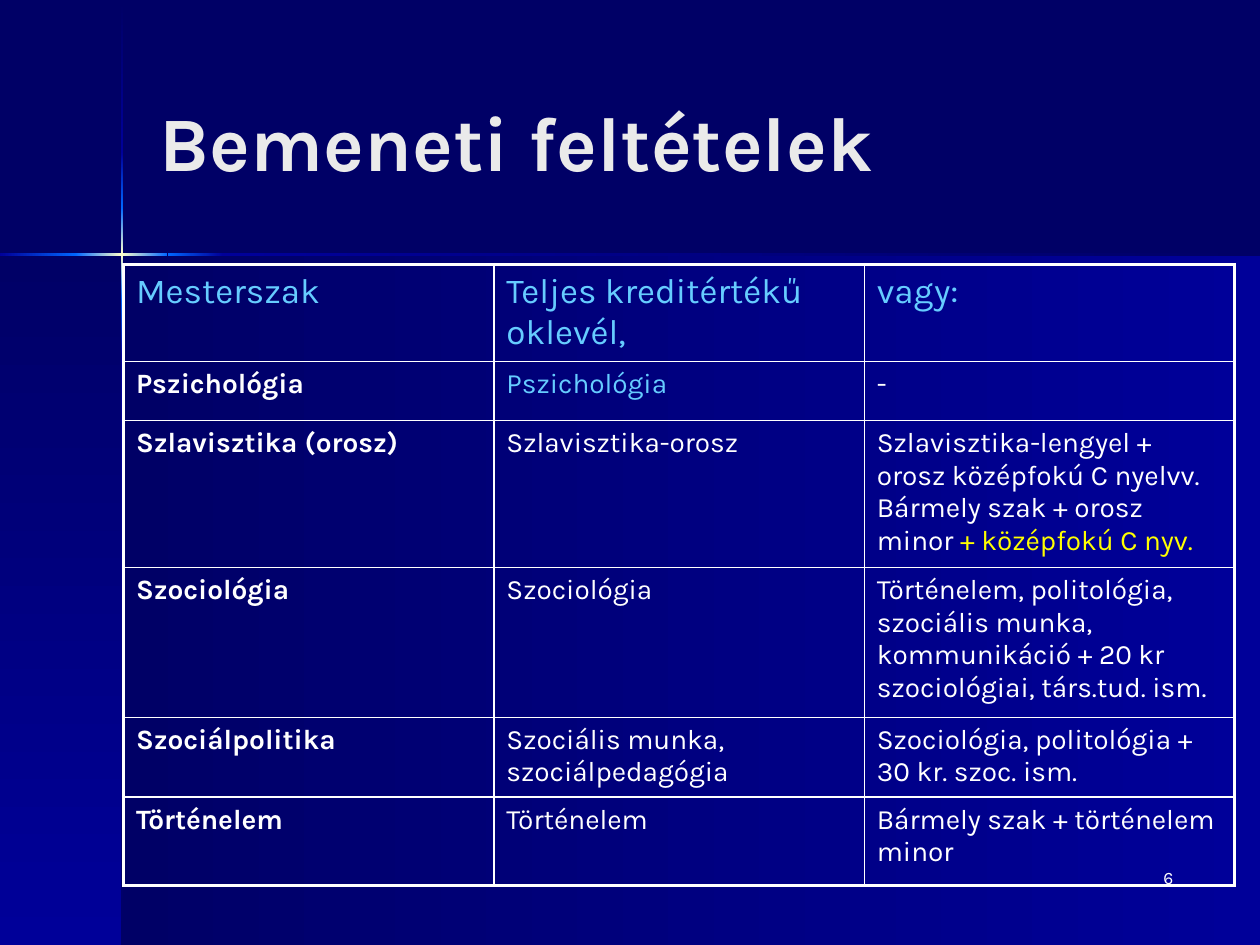
from lxml.etree import SubElement
from pptx import Presentation
from pptx.dml.color import RGBColor
from pptx.enum.shapes import MSO_SHAPE as Shape
from pptx.enum.text import MSO_ANCHOR as Anchor, PP_ALIGN as Align
from pptx.oxml.ns import qn
from pptx.util import Inches, Pt

FONT = "Karla"
NAVY, BLUE, BRIGHT, GLOW = "000066", "000099", "0066FF", "FFFFCC"
WHITE, SKY, YELLOW, PALE = "FFFFFF", "66CCFF", "FFFF00", "EAEAEA"
ACROSS, DOWN = 0, 90

HEADINGS = ["Mesterszak", "Teljes kreditértékű oklevél,", "vagy:"]
PROGRAMMES = [
    ("Pszichológia", "Pszichológia", "-"),
    ("Szlavisztika (orosz)", "Szlavisztika-orosz",
     "Szlavisztika-lengyel + orosz középfokú C nyelvv.\vBármely szak + orosz minor "),
    ("Szociológia", "Szociológia",
     "Történelem, politológia, szociális munka, kommunikáció + 20 kr szociológiai, társ.tud. ism."),
    ("Szociálpolitika", "Szociális munka, szociálpedagógia",
     "Szociológia, politológia + 30 kr. szoc. ism."),
    ("Történelem", "Történelem", "Bármely szak + történelem minor"),
]
ROW_HEIGHTS = [0.75, 0.47, 1.14, 1.19, 0.63, 0.7]


def color(value):
    return RGBColor.from_string(value)


def format_span(span, size, shade, bold=False):
    span.font.name = FONT
    span.font.size = Pt(size)
    span.font.bold = bold
    span.font.color.rgb = color(shade)


def add_gradient_box(page, left, top, width, height, shades, angle):
    box = page.shapes.add_shape(
        Shape.RECTANGLE, Inches(left), Inches(top), Inches(width), Inches(height))
    box.shadow.inherit = False
    box.line.fill.background()
    box.fill.gradient()
    box.fill.gradient_angle = -angle % 360
    stops = box._element.spPr.find(qn("a:gradFill")).find(qn("a:gsLst"))
    for stop in list(stops):
        stops.remove(stop)
    for index, shade in enumerate(shades):
        position = index * 100000 // (len(shades) - 1)
        stop = SubElement(stops, qn("a:gs"), pos=str(position))
        SubElement(stop, qn("a:srgbClr"), val=shade)


def add_backdrop(page):
    page.background.fill.solid()
    page.background.fill.fore_color.rgb = color(NAVY)
    add_gradient_box(page, 0.97, 2.02, 9.03, 5.48, [NAVY, BLUE], ACROSS)
    add_gradient_box(page, 0, 2.02, 0.97, 5.48, [NAVY, BLUE], DOWN)
    rise, flare, fall = [BLUE, BRIGHT], [BRIGHT, GLOW, BRIGHT], [BRIGHT, BLUE]
    vertical = [(0.01, 1.21, [NAVY, BLUE]), (2.82, 7.5, [BLUE, NAVY]),
                (2.38, 2.82, fall), (1.21, 1.65, rise), (1.65, 2.38, flare)]
    for start, end, shades in vertical:
        add_gradient_box(page, 0.96, start, 0.02, end - start, shades, DOWN)
    horizontal = [(1.77, 10, [BLUE, NAVY]), (0, 0.61, rise),
                  (1.33, 1.77, fall), (0.6, 1.33, flare)]
    for start, end, shades in horizontal:
        add_gradient_box(page, start, 2.01, end - start, 0.02, shades, ACROSS)


def add_label(page, left, top, width, height, text, size, shade,
              bold=False, align=Align.LEFT, anchor=Anchor.TOP):
    box = page.shapes.add_textbox(
        Inches(left), Inches(top), Inches(width), Inches(height))
    frame = box.text_frame
    frame.word_wrap = True
    frame.vertical_anchor = anchor
    frame.text = text
    para = frame.paragraphs[0]
    para.alignment = align
    format_span(para.runs[0], size, shade, bold)


def set_borders(cell, widths):
    properties = cell._tc.get_or_add_tcPr()
    for side, width in widths.items():
        line = SubElement(properties, qn(f"a:ln{side}"), w=str(Pt(width)))
        fill = SubElement(line, qn("a:solidFill"))
        SubElement(fill, qn("a:srgbClr"), val=WHITE)


def add_requirements(page, left, top, width):
    rows = [HEADINGS, *PROGRAMMES]
    last_row, last_column = len(rows) - 1, len(HEADINGS) - 1
    table = page.shapes.add_table(
        len(rows), len(HEADINGS), Inches(left), Inches(top),
        Inches(width), Inches(sum(ROW_HEIGHTS))).table
    table.first_row = False
    table.horz_banding = False
    for column in table.columns:
        column.width = Inches(width / len(HEADINGS))
    for r, texts in enumerate(rows):
        table.rows[r].height = Inches(ROW_HEIGHTS[r])
        for c, text in enumerate(texts):
            cell = table.cell(r, c)
            outer = {"L": c == 0, "R": c == last_column, "T": r == 0, "B": r == last_row}
            set_borders(cell, {side: 2.25 if edge else 1 for side, edge in outer.items()})
            cell.fill.background()
            para = cell.text_frame.paragraphs[0]
            para.text = text
            shade = SKY if r == 0 or (r, c) == (1, 1) else WHITE
            for span in para.runs:
                format_span(span, 16 if r else 20, shade, bool(r) and c == 0)
    extra = table.cell(2, 2).text_frame.paragraphs[0].add_run()
    extra.text = "+ középfokú C nyv."
    format_span(extra, 16, YELLOW)


def main():
    deck = Presentation()
    deck.slide_width, deck.slide_height = Inches(10), Inches(7.5)
    page = deck.slides.add_slide(deck.slide_layouts[6])
    add_backdrop(page)
    add_label(page, 7.33, 6.83, 2.08, 0.5, "6", 10, WHITE, align=Align.RIGHT)
    add_label(page, 1.17, 0.33, 8.25, 1.57, "Bemeneti feltételek", 44, PALE,
              bold=True, anchor=Anchor.MIDDLE)
    add_requirements(page, 0.98, 2.1, 8.82)
    deck.save("out.pptx")


if __name__ == "__main__":
    main()
